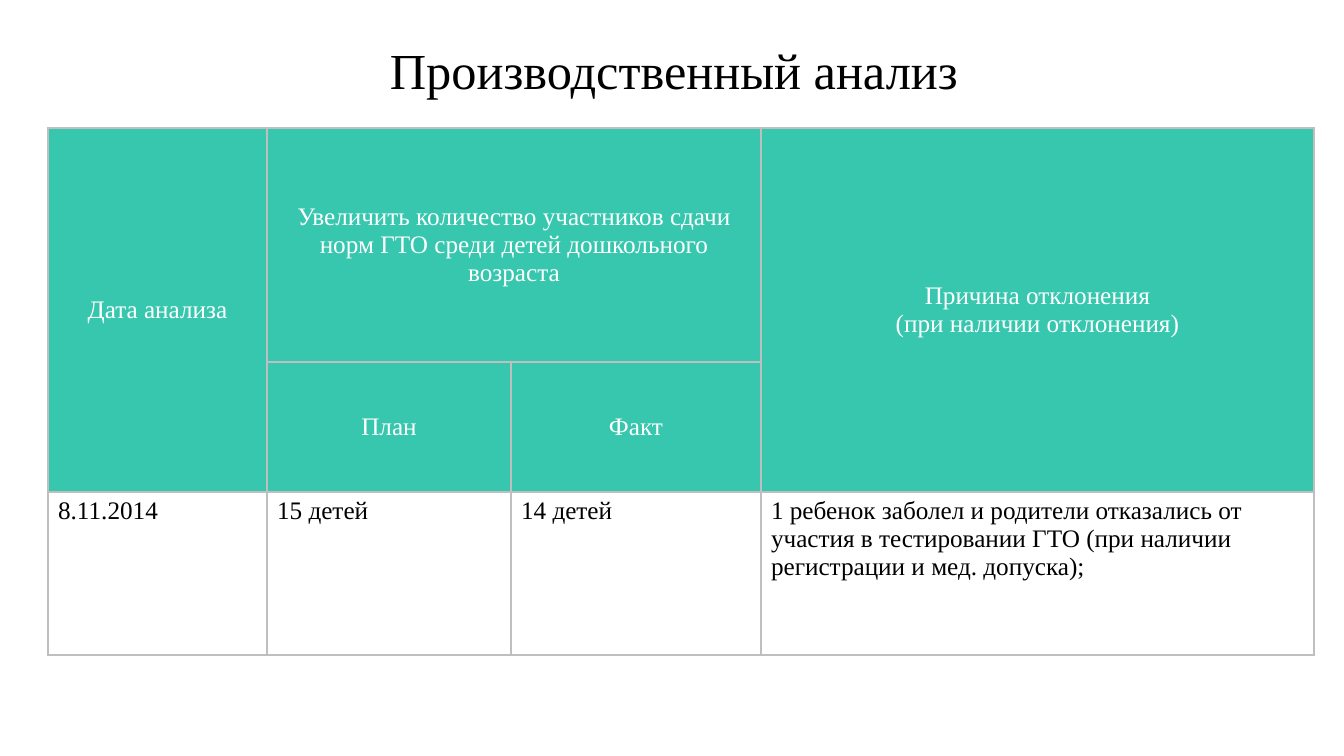
from lxml.etree import SubElement as Sub
from pptx import Presentation
from pptx.dml.color import RGBColor as RGB
from pptx.enum.text import MSO_ANCHOR as Anchor, PP_ALIGN as Align
from pptx.oxml.ns import qn
from pptx.util import Pt

SCALE = 914400 / 100.8
BLACK = RGB(0, 0, 0)
WHITE = RGB(255, 255, 255)
TEAL = RGB(0x37, 0xC7, 0xAF)
GREY = RGB(0xBF, 0xBF, 0xBF)

COLS = [219, 244, 250, 553]
ROWS = [234, 130, 163]
HEAD = [
    (0, 0, 1, 0, ["Дата анализа"]),
    (0, 1, 0, 2, ["Увеличить количество участников сдачи норм ГТО "
                  "среди детей дошкольного возраста"]),
    (0, 3, 1, 3, ["Причина отклонения", "(при наличии отклонения)"]),
    (1, 1, 1, 1, ["План"]),
    (1, 2, 1, 2, ["Факт"]),
]
BODY = [
    "8.11.2014",
    "15 детей",
    "14 детей",
    "1 ребенок заболел и родители отказались от участия в тестировании "
    "ГТО (при наличии регистрации и мед. допуска);",
]


def px(size):
    return round(size * SCALE)


class Deck:
    font = "Times New Roman"

    def __init__(self, width, height):
        self.prs = Presentation()
        self.prs.slide_width = px(width)
        self.prs.slide_height = px(height)
        self.slide = self.prs.slides.add_slide(self.prs.slide_layouts[6])

    def text(self, frame, lines, size, color, align):
        for i, line in enumerate(lines):
            para = frame.add_paragraph() if i else frame.paragraphs[0]
            para.alignment = align
            run = para.add_run()
            run.text = line
            run.font.name = self.font
            run.font.size = Pt(size)
            run.font.color.rgb = color

    def title(self, box, words):
        frame = self.slide.shapes.add_textbox(*map(px, box)).text_frame
        frame.word_wrap = True
        frame.vertical_anchor = Anchor.MIDDLE
        self.text(frame, [words], 36, BLACK, Align.CENTER)
        frame.paragraphs[0].line_spacing = 0.9

    def table(self, left, top, cols, rows):
        box = map(px, (left, top, sum(cols), sum(rows)))
        grid = self.slide.shapes.add_table(len(rows), len(cols), *box).table
        grid.first_row = grid.horz_banding = False
        for col, width in zip(grid.columns, cols):
            col.width = px(width)
        for row, height in zip(grid.rows, rows):
            row.height = px(height)
        for cell in grid.iter_cells():
            self.border(cell)
            cell.fill.background()
        return grid

    def border(self, cell):
        props = cell._tc.get_or_add_tcPr()
        for side in "LRTB":
            line = Sub(props, qn(f"a:ln{side}"), w=str(Pt(1)))
            Sub(Sub(line, qn("a:solidFill")), qn("a:srgbClr"), val=str(GREY))

    def head(self, grid, row, col, last, end, lines):
        cell = grid.cell(row, col)
        if (row, col) != (last, end):
            cell.merge(grid.cell(last, end))
        cell.fill.solid()
        cell.fill.fore_color.rgb = TEAL
        cell.vertical_anchor = Anchor.MIDDLE
        self.text(cell.text_frame, lines, 18, WHITE, Align.CENTER)

    def body(self, cell, words):
        self.text(cell.text_frame, [words], 18, BLACK, Align.LEFT)


def main():
    deck = Deck(1344, 756)
    deck.title((34, 36, 1280, 74), "Производственный анализ")
    grid = deck.table(48, 128, COLS, ROWS)
    for item in HEAD:
        deck.head(grid, *item)
    for col, words in enumerate(BODY):
        deck.body(grid.cell(2, col), words)
    deck.prs.save("out.pptx")


if __name__ == "__main__":
    main()
